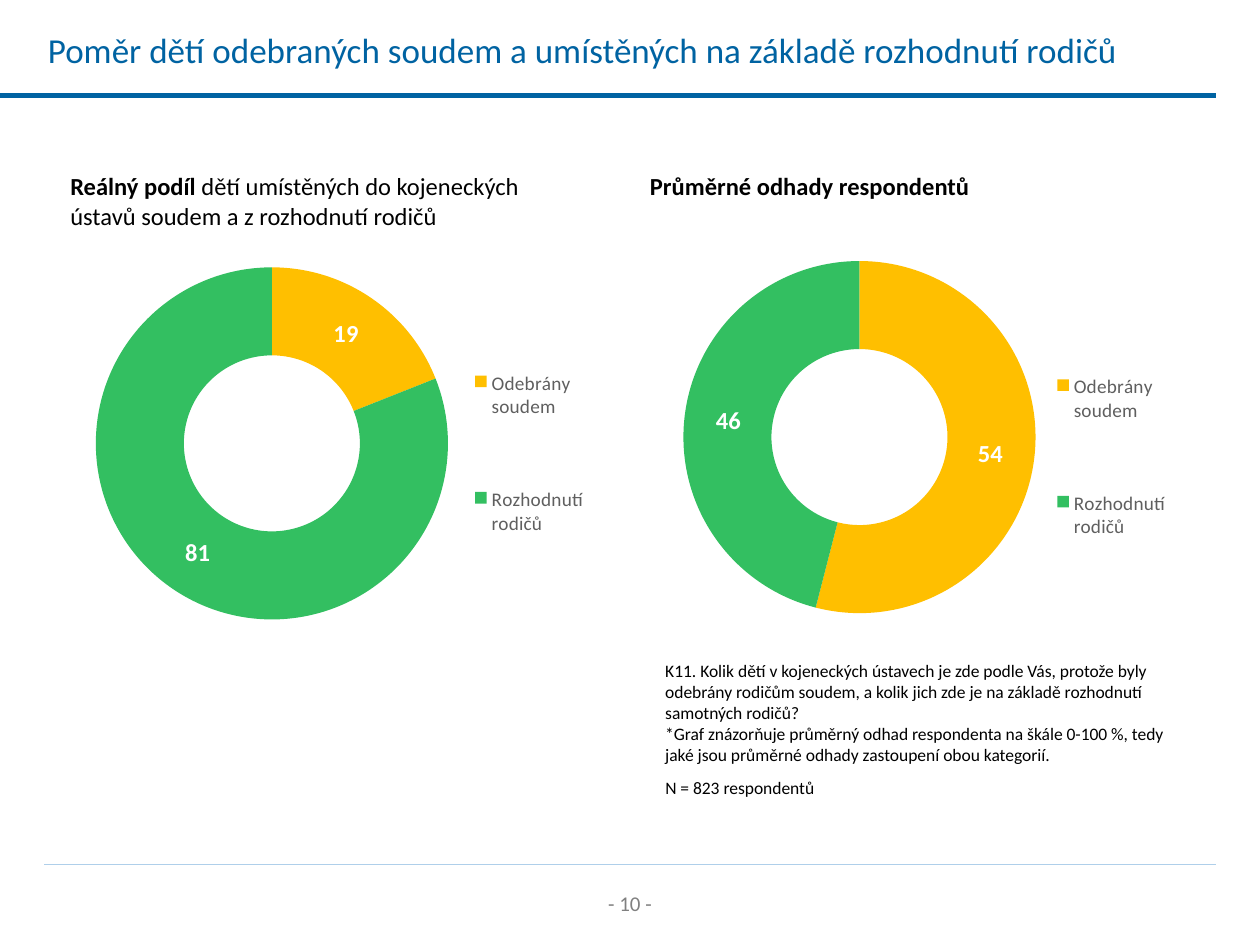
"""Build a slide comparing the real and the estimated share of children placed by court or by parents."""
from lxml.etree import SubElement
from pptx import Presentation
from pptx.chart.data import CategoryChartData
from pptx.dml.color import RGBColor
from pptx.enum.chart import XL_CHART_TYPE, XL_LEGEND_POSITION
from pptx.enum.text import MSO_ANCHOR, MSO_AUTO_SIZE, PP_ALIGN
from pptx.oxml import parse_xml
from pptx.oxml.ns import nsdecls, qn
from pptx.util import Inches, Pt

color = RGBColor.from_string


def add_text(box, paragraphs, size, hex_color="000000", left_inset=0.1):
    """Fill a text box; each paragraph is a list of (text, bold) runs."""
    frame = box.text_frame
    frame.word_wrap = True
    frame.margin_left = Inches(left_inset)
    for number, runs in enumerate(paragraphs):
        paragraph = frame.add_paragraph() if number else frame.paragraphs[0]
        paragraph.font.name = "Calibri"
        paragraph.font.size = Pt(size)
        paragraph.font.color.rgb = color(hex_color)
        for text, bold in runs:
            run = paragraph.add_run()
            run.text = text
            run.font.bold = bold
    return frame


def manual_layout(x, y, width, height, target=""):
    """Return a chart layout element with fractional position and size."""
    return parse_xml(
        f'<c:layout {nsdecls("c")}><c:manualLayout>{target}'
        '<c:xMode val="edge"/><c:yMode val="edge"/>'
        f'<c:x val="{x}"/><c:y val="{y}"/><c:w val="{width}"/><c:h val="{height}"/>'
        '</c:manualLayout></c:layout>')


prs = Presentation()
prs.slide_width, prs.slide_height = Inches(10), Inches(7.5)
slide = prs.slides.add_slide(prs.slide_layouts[5])
shapes = slide.shapes

for y, x_start, hex_color, width in [(6.86, 0.35, "AFCFEA", 0.5), (0.76, 0, "0063A2", 3)]:
    rule = shapes.add_connector(1, Inches(x_start), Inches(y), Inches(9.65), Inches(y))
    rule.line.color.rgb = color(hex_color)
    rule.line.width = Pt(width)
    SubElement(rule._element.spPr, qn("a:effectLst"))

title = shapes.title
title.left, title.top, title.width, title.height = Inches(0.28), Inches(0), Inches(8.92), Inches(0.79)
title_frame = add_text(
    title, [[("Poměr dětí odebraných soudem a umístěných na základě rozhodnutí rodičů", False)]], 20, "0063A2")
title_frame.auto_size = MSO_AUTO_SIZE.NONE
title_frame.vertical_anchor = MSO_ANCHOR.MIDDLE
title_frame.paragraphs[0].alignment = PP_ALIGN.LEFT

page_number = shapes.add_textbox(Inches(4.37), Inches(7.02), Inches(1.26), Inches(0.3))
page_frame = add_text(page_number, [[("- 10 -", False)]], 12, "808080")
page_frame.paragraphs[0].alignment = PP_ALIGN.CENTER

question = shapes.add_textbox(Inches(5.28), Inches(5.19), Inches(4.3), Inches(0.94))
add_text(question, [
    [("K11. Kolik dětí v kojeneckých ústavech je zde podle Vás, protože byly odebrány rodičům soudem, "
      "a kolik jich zde je na základě rozhodnutí samotných rodičů?", False)],
    [("*Graf znázorňuje průměrný odhad respondenta na škále 0-100 %, tedy jaké jsou průměrné odhady "
      "zastoupení obou kategorií.", False)],
], 10, left_inset=0)
sample = shapes.add_textbox(Inches(5.28), Inches(6.12), Inches(3.32), Inches(0.27))
add_text(sample, [[("N = 823 respondentů", False)]], 10, left_inset=0)

estimate_heading = [("Průměrné odhady respondentů", True)]
real_heading = [("Reálný podíl ", True),
                ("dětí umístěných do kojeneckých ústavů soudem a z rozhodnutí rodičů", False)]
panels = [
    (5.08, 1.63, (54, 46), (0.08, 0.1), 5.06, 0.34, estimate_heading),
    (0.46, 1.6, (19, 81), (0.07, 0.12), 0.46, 0.57, real_heading),
]
for left, top, shares, ring_origin, heading_left, heading_height, heading in panels:
    data = CategoryChartData(number_format="#,##0")
    data.categories = ["Odebrány soudem", "Rozhodnutí rodičů"]
    data.add_series("Series 1", shares)
    chart = shapes.add_chart(XL_CHART_TYPE.DOUGHNUT, Inches(left), Inches(top),
                             Inches(4.3), Inches(4), data).chart
    chart.has_title = False
    chart.font.name = "Calibri"
    chart.font.size = Pt(18)
    chart.font.color.rgb = color("000000")

    chart.has_legend = True
    legend = chart.legend
    legend.position = XL_LEGEND_POSITION.RIGHT
    legend.include_in_layout = False
    legend.font.name = "Calibri"
    legend.font.size = Pt(11)
    legend.font.color.rgb = color("5F5F5F")

    plot_area = chart._chartSpace.chart.plotArea
    for area in (plot_area, legend._element):
        for old_layout in area.findall(qn("c:layout")):
            area.remove(old_layout)
    plot_area.insert(0, manual_layout(*ring_origin, 0.65, 0.72, '<c:layoutTarget val="inner"/>'))
    legend._element.find(qn("c:overlay")).addprevious(manual_layout(0.75, 0.2, 0.24, 0.6))

    ring = chart.plots[0]
    ring.vary_by_categories = True
    series = ring.series[0]
    for index, hex_color in enumerate(("FFBF00", "33BF61")):
        slice_format = series.points[index].format
        slice_format.fill.solid()
        slice_format.fill.fore_color.rgb = color(hex_color)
        slice_format.line.fill.background()
    labels = series.data_labels
    labels.show_value = True
    labels.show_percentage = False
    labels.number_format = "#,##0"
    labels.number_format_is_linked = False
    labels.font.name = "Calibri"
    labels.font.size = Pt(14)
    labels.font.bold = True
    labels.font.color.rgb = color("FFFFFF")

    heading_box = shapes.add_textbox(Inches(heading_left), Inches(1.31), Inches(4.13), Inches(heading_height))
    add_text(heading_box, [heading], 14)

prs.save("out.pptx")
